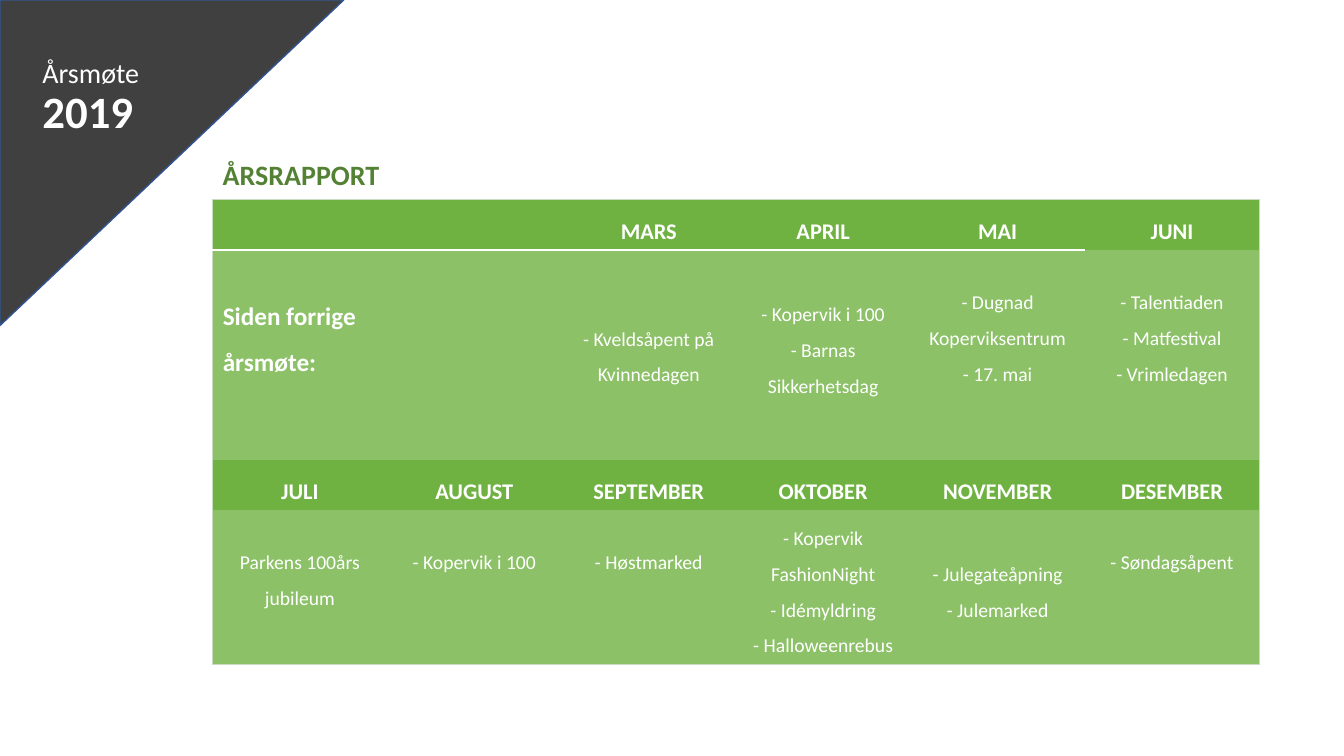
from dataclasses import dataclass

from pptx import Presentation
from pptx.dml.color import RGBColor
from pptx.enum import shapes, text
from pptx.oxml import ns, xmlchemy
from pptx.util import Inches, Pt


@dataclass(frozen=True)
class Theme:
    font: str = "Calibri"
    dark: str = "404040"
    edge: str = "325491"
    green: str = "6FB242"
    light: str = "8CC168"
    deep: str = "548235"
    frame: str = "C9DBC1"
    white: str = "FFFFFF"
    body: int = 14
    month: int = 16
    lead: int = 18
    head: int = 20
    year: int = 32


@dataclass(frozen=True)
class Entry:
    """Text of a table cell, and the space in inches above it."""
    words: str = ""
    drop: float = 0


THEME = Theme()
NO_STYLE = "{2D5ABB26-0587-4C30-8999-92F81FD0307C}"
COL = 1.73
HEIGHTS = (0.5, 2.08, 0.5, 1.53)
LINE = 0.24
BREAK = 0.36
ROWS = (
    (Entry(), Entry(), Entry("MARS"), Entry("APRIL"), Entry("MAI"), Entry("JUNI")),
    (
        Entry("Siden forrige årsmøte:", 0.31),
        Entry(),
        Entry("- Kveldsåpent på Kvinnedagen", LINE + BREAK),
        Entry("- Kopervik i 100\n- Barnas Sikkerhetsdag", BREAK),
        Entry("- Dugnad Koperviksentrum\v- 17. mai", LINE),
        Entry("- Talentiaden\v- Matfestival\v- Vrimledagen", LINE),
    ),
    tuple(Entry(name) for name in
          ("JULI", "AUGUST", "SEPTEMBER", "OKTOBER", "NOVEMBER", "DESEMBER")),
    (
        Entry("Parkens 100års jubileum", LINE),
        Entry("- Kopervik i 100", LINE),
        Entry("- Høstmarked", LINE),
        Entry("- Kopervik FashionNight\v- Idémyldring\v- Halloweenrebus"),
        Entry("- Julegateåpning\v- Julemarked", BREAK),
        Entry("- Søndagsåpent", LINE),
    ),
)


def style(run, size: int, color: str, bold: bool) -> None:
    run.font.name = THEME.font
    run.font.size = Pt(size)
    run.font.bold = bold
    run.font.color.rgb = RGBColor.from_string(color)


def border(cell, sides: dict[str, tuple[str, float]]) -> None:
    """Draw the given sides (L, R, T, B), each a colour and a width in points."""
    props = cell._tc.get_or_add_tcPr()
    drawn = [side for side in "LRTB" if side in sides]
    for place, side in enumerate(drawn):
        color, width = sides[side]
        line = xmlchemy.OxmlElement(f"a:ln{side}")
        line.set("w", str(Pt(width)))
        fill = xmlchemy.OxmlElement("a:solidFill")
        tone = xmlchemy.OxmlElement("a:srgbClr")
        tone.set("val", color)
        fill.append(tone)
        line.append(fill)
        props.insert(place, line)


def corner(slide) -> None:
    shape = slide.shapes.add_shape(
        shapes.MSO_SHAPE.RIGHT_TRIANGLE, 0, 0, Inches(3.41), Inches(3.23))
    shape.shadow.inherit = False
    shape.fill.solid()
    shape.fill.fore_color.rgb = RGBColor.from_string(THEME.dark)
    shape.line.color.rgb = RGBColor.from_string(THEME.edge)
    shape.line.width = Pt(1)
    shape._element.spPr.xfrm.set("flipV", "1")
    slide.shapes._spTree.insert(2, shape._element)


def title(slide) -> None:
    box = slide.shapes.title
    box.left, box.top = Inches(0.32), Inches(-0.01)
    box.width, box.height = Inches(5.08), Inches(1.43)
    frame = box.text_frame
    frame.text = "Årsmøte \v2019"
    frame.auto_size = text.MSO_AUTO_SIZE.NONE
    frame.vertical_anchor = text.MSO_ANCHOR.BOTTOM
    para = frame.paragraphs[0]
    para.alignment = text.PP_ALIGN.LEFT
    para.line_spacing = 0.9
    name, year = para.runs
    style(name, THEME.head, THEME.white, False)
    style(year, THEME.year, THEME.white, True)


def label(slide) -> None:
    box = slide.shapes.add_textbox(
        Inches(2.11), Inches(1.51), Inches(4.25), Inches(0.44))
    frame = box.text_frame
    frame.word_wrap = True
    frame.auto_size = text.MSO_AUTO_SIZE.SHAPE_TO_FIT_TEXT
    frame.text = "ÅRSRAPPORT"
    style(frame.paragraphs[0].runs[0], THEME.head, THEME.deep, True)


def write(cell, entry: Entry, month: bool, lead: bool) -> None:
    cell.fill.solid()
    cell.fill.fore_color.rgb = RGBColor.from_string(
        THEME.green if month else THEME.light)
    cell.margin_top = Inches(0.05 + entry.drop)
    cell.text_frame.text = entry.words
    size = THEME.month if month else THEME.lead if lead else THEME.body
    for para in cell.text_frame.paragraphs:
        para.line_spacing = 1.5
        para.alignment = text.PP_ALIGN.LEFT if lead else text.PP_ALIGN.CENTER
        for run in para.runs:
            style(run, size, THEME.white, month or lead)


def calendar(slide) -> None:
    count = len(ROWS[0])
    table = slide.shapes.add_table(
        len(ROWS), count, Inches(2.11), Inches(1.98),
        Inches(COL * count), Inches(sum(HEIGHTS))).table
    table._tbl.tblPr.find(ns.qn("a:tableStyleId")).text = NO_STYLE
    table.first_row = table.horz_banding = False
    for column in table.columns:
        column.width = Inches(COL)
    last = len(ROWS) - 1
    thin = (THEME.frame, 0.5)
    for y, entries in enumerate(ROWS):
        table.rows[y].height = Inches(HEIGHTS[y])
        for x, entry in enumerate(entries):
            cell = table.cell(y, x)
            write(cell, entry, month=y % 2 == 0, lead=(y, x) == (1, 0))
            edges = {"L": x == 0, "R": x == count - 1, "T": y == 0, "B": y == last}
            sides = {side: thin for side, outer in edges.items() if outer}
            if y == 0 and x < count - 1:
                sides["B"] = (THEME.white, 1.5)
            border(cell, sides)


def main() -> None:
    deck = Presentation()
    deck.slide_width, deck.slide_height = Inches(13.33), Inches(7.5)
    slide = deck.slides.add_slide(deck.slide_layouts[5])
    corner(slide)
    title(slide)
    label(slide)
    calendar(slide)
    deck.save("out.pptx")


if __name__ == "__main__":
    main()
